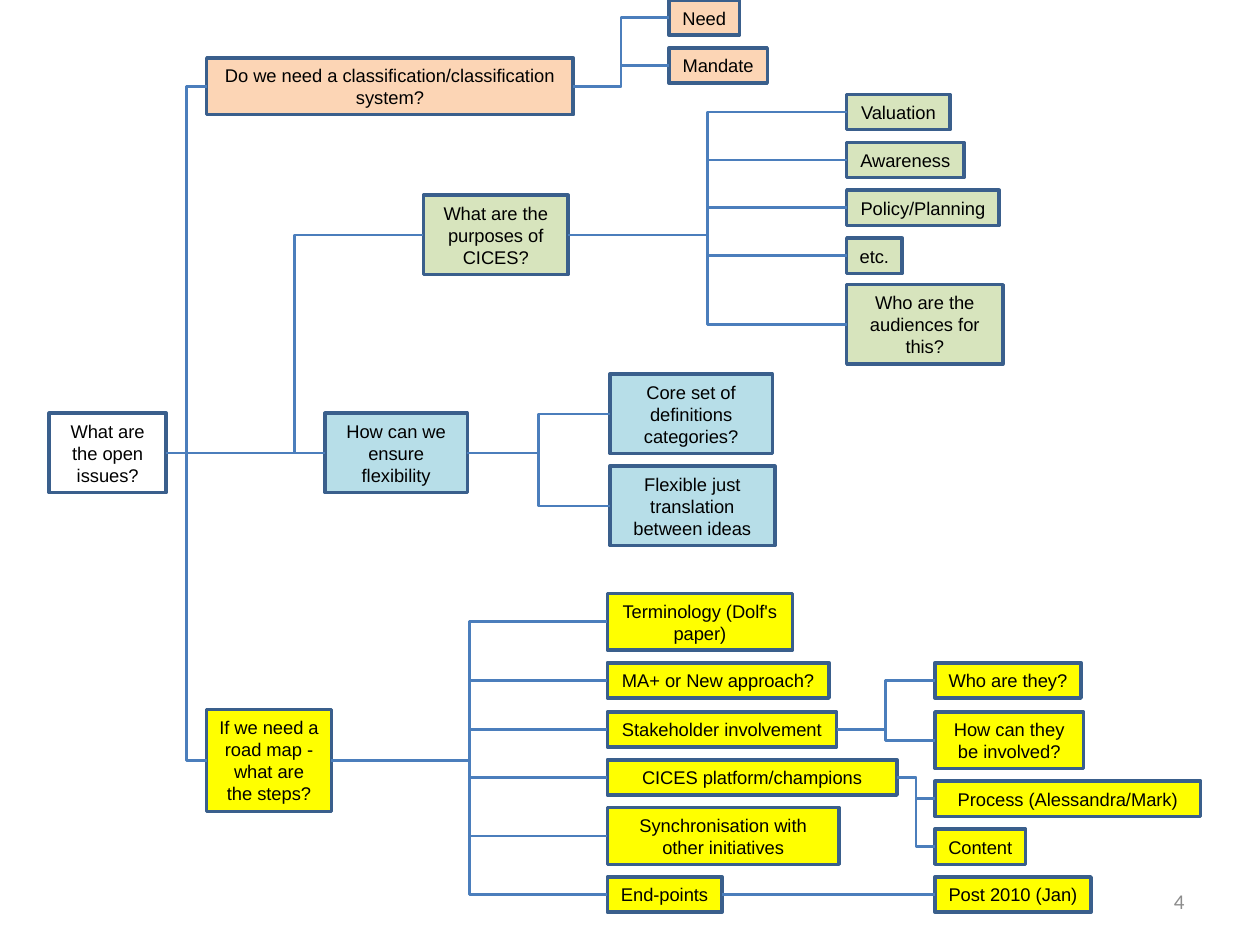
import pptx
import pptx.util
import pptx.dml.color
import pptx.enum.shapes
import pptx.enum.text
import pptx.oxml.xmlchemy
import lxml.etree
from pptx.util import Inches

WHITE, PEACH, GREEN, BLUE, YELLOW = "FFFFFF", "FCD5B5", "D7E4BD", "B7DEE8", "FFFF00"
BOX_LINE, LINK_LINE, NUMBER_GREY = "3A5F8C", "4B7EBC", "8C8C8C"
HEIGHTS = {1: 0.28, 2: 0.45, 3: 0.63, 4: 0.81}

# name: (text, left, top, width, text lines)
ISSUES = ("What are the open issues?", 0.39, 3.28, 0.93, 3)
BRANCHES = [
    (PEACH, ("Do we need a classification/classification system?", 1.64, 0.46, 2.91, 2), [
        (("Need", 5.31, 0, 0.56, 1), []),
        (("Mandate", 5.31, 0.38, 0.78, 1), []),
    ]),
    (GREEN, ("What are the purposes of CICES?", 3.36, 1.55, 1.15, 3), [
        (("Valuation", 6.72, 0.75, 0.82, 1), []),
        (("Awareness", 6.72, 1.13, 0.93, 1), []),
        (("Policy/Planning", 6.72, 1.51, 1.21, 1), []),
        (("etc.", 6.72, 1.89, 0.44, 1), []),
        (("Who are the audiences for this?", 6.72, 2.26, 1.24, 3), []),
    ]),
    (BLUE, ("How can we ensure flexibility", 2.58, 3.28, 1.13, 3), [
        (("Core set of definitions categories?", 4.84, 2.97, 1.29, 3), []),
        (("Flexible just translation between ideas", 4.84, 3.7, 1.31, 3), []),
    ]),
    (YELLOW, ("If we need a road map - what are the steps?", 1.64, 5.63, 0.99, 4), [
        (("Terminology (Dolf's paper)", 4.82, 4.71, 1.47, 2), []),
        (("MA+ or New approach?", 4.82, 5.26, 1.76, 1), []),
        (("Stakeholder involvement", 4.82, 5.65, 1.82, 1), [
            ("Who are they?", 7.42, 5.26, 1.16, 1),
            ("How can they be involved?", 7.42, 5.65, 1.18, 2),
        ]),
        (("CICES platform/champions", 4.82, 6.03, 2.3, 1), [
            ("Process (Alessandra/Mark)", 7.42, 6.2, 2.11, 1),
            ("Content", 7.42, 6.58, 0.72, 1),
        ]),
        (("Synchronisation with other initiatives", 4.82, 6.41, 1.84, 2), []),
        (("End-points", 4.82, 6.96, 0.91, 1), [
            ("Post 2010 (Jan)", 7.42, 6.96, 1.24, 1),
        ]),
    ]),
]


def color(value):
    return pptx.dml.color.RGBColor.from_string(value)


def apply(target, values):
    for name, value in values.items():
        setattr(target, name, value)


def write(shape, text, align, size, font, ink, frame_format):
    frame = shape.text_frame
    apply(frame, {"vertical_anchor": pptx.enum.text.MSO_ANCHOR.MIDDLE, **frame_format})
    para = frame.paragraphs[0]
    para.alignment = align
    span = para.add_run()
    span.text = text
    apply(span.font, {"size": pptx.util.Pt(size), "name": font})
    span.font.color.rgb = color(ink)


def add_box(shapes, node, fill):
    text, left, top, width, lines = node
    box = shapes.add_shape(
        pptx.enum.shapes.MSO_SHAPE.RECTANGLE,
        Inches(left), Inches(top), Inches(width), Inches(HEIGHTS[lines]))
    box.shadow.inherit = False
    box.fill.solid()
    box.fill.fore_color.rgb = color(fill)
    box.line.color.rgb = color(BOX_LINE)
    box.line.width = pptx.util.Pt(2)
    write(box, text, pptx.enum.text.PP_ALIGN.CENTER, 10.5, "Arial", "000000", {
        "word_wrap": lines > 1,
        "auto_size": pptx.enum.text.MSO_AUTO_SIZE.SHAPE_TO_FIT_TEXT,
    })
    return box


def add_link(shapes, parent, child):
    link = shapes.add_connector(
        pptx.enum.shapes.MSO_CONNECTOR.ELBOW,
        parent.left + parent.width, parent.top + parent.height // 2,
        child.left, child.top + child.height // 2)
    link.begin_connect(parent, 3)
    link.end_connect(child, 1)
    link.line.color.rgb = color(LINK_LINE)
    link.line.width = pptx.util.Pt(1.5)
    lxml.etree.SubElement(link._element.spPr, pptx.oxml.ns.qn("a:effectLst"))


def main():
    deck = pptx.Presentation()
    apply(deck, {"slide_width": Inches(10), "slide_height": Inches(7.5)})
    page = deck.slides.add_slide(deck.slide_layouts[6])

    number = page.shapes.add_textbox(Inches(7.17), Inches(6.95), Inches(2.33), Inches(0.4))
    write(number, "4", pptx.enum.text.PP_ALIGN.RIGHT, 12, "Calibri", NUMBER_GREY,
          {"word_wrap": True})

    shapes = page.shapes.add_group_shape().shapes
    links = []
    root = add_box(shapes, ISSUES, WHITE)
    for fill, question, answers in BRANCHES:
        branch = add_box(shapes, question, fill)
        links.append((root, branch))
        for answer, details in answers:
            leaf = add_box(shapes, answer, fill)
            links.append((branch, leaf))
            links += [(leaf, add_box(shapes, detail, fill)) for detail in details]
    for parent, child in links:
        add_link(shapes, parent, child)

    deck.save("out.pptx")


if __name__ == "__main__":
    main()
